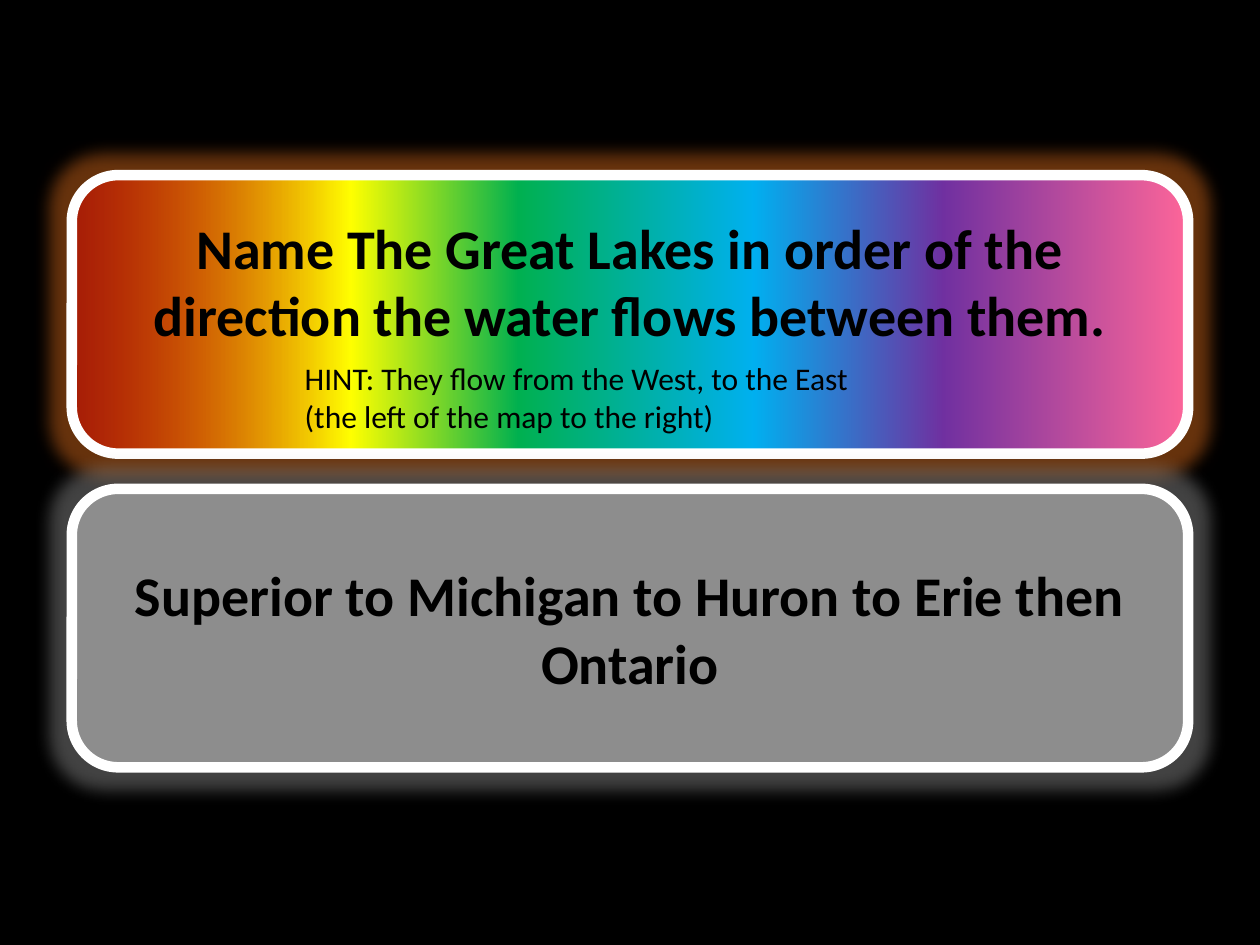
from lxml.etree import SubElement
from pptx import Presentation
from pptx.dml.color import RGBColor
from pptx.enum.shapes import MSO_SHAPE
from pptx.enum.text import MSO_ANCHOR, PP_ALIGN
from pptx.oxml.ns import qn
from pptx.util import Inches, Pt

RAINBOW = [(0, "FF0000", 41), (25, "FFFF00", 100), (40, "00B050", 100),
           (61, "00B0F0", 100), (78, "7030A0", 100), (100, "FF6699", 100)]


def rgb(code):
    return RGBColor.from_string(code)


def tint(parent, code, alpha):
    node = SubElement(parent, qn("a:srgbClr"), val=code)
    if alpha < 100:
        SubElement(node, qn("a:alpha"), val=str(alpha * 1000))


def write(frame, text, size, bold=False, align=PP_ALIGN.LEFT):
    frame.word_wrap = True
    frame.text = text
    para = frame.paragraphs[0]
    para.alignment = align
    font = para.font
    font.name, font.size, font.bold = "Calibri", Pt(size), bold
    font.color.rgb = rgb("000000")


def blend(card, stops):
    card.fill.gradient()
    card.fill.gradient_angle = 0
    group = card.element.spPr.find(".//" + qn("a:gsLst"))
    for old in list(group):
        group.remove(old)
    for place, code, alpha in stops:
        stop = SubElement(group, qn("a:gs"), pos=str(place * 1000))
        tint(stop, code, alpha)


def veil(card, code, alpha):
    card.fill.solid()
    card.fill.fore_color.rgb = rgb(code)
    color = card.element.spPr.find(qn("a:solidFill")).find(qn("a:srgbClr"))
    SubElement(color, qn("a:alpha"), val=str(alpha * 1000))


def panel(slide, box, halo):
    card = slide.shapes.add_shape(MSO_SHAPE.ROUNDED_RECTANGLE, *map(Inches, box))
    card.line.color.rgb = rgb("FFFFFF")
    card.line.width = Pt(6)
    card.shadow.inherit = False
    effects = card.element.spPr.find(qn("a:effectLst"))
    glow = SubElement(effects, qn("a:glow"), rad=str(Inches(0.25)))
    tint(glow, halo, 40)
    return card


def question(slide, box):
    left, top, width, height = box
    card = panel(slide, box, "FF7D1F")
    blend(card, RAINBOW)

    title = slide.shapes.title
    title.left, title.top = Inches(left + 0.11), Inches(top + 0.3)
    title.width, title.height = Inches(width - 0.22), Inches(1.07)
    write(title.text_frame,
          "Name The Great Lakes in order of the direction the water flows between them.",
          32, True, PP_ALIGN.CENTER)
    title.text_frame.vertical_anchor = MSO_ANCHOR.MIDDLE
    slide.shapes._spTree.append(title.element)

    hint = slide.shapes.add_textbox(Inches(left + 1.75), Inches(top + 1.41),
                                    Inches(4.88), Inches(0.71))
    write(hint.text_frame,
          "HINT: They flow from the West, to the East (the left of the map to the right)",
          18)


def answer(slide, box):
    card = panel(slide, box, "A5A5A5")
    veil(card, "FFFFFF", 40)
    write(card.text_frame, "Superior to Michigan to Huron to Erie then Ontario",
          32, True, PP_ALIGN.CENTER)
    card.text_frame.vertical_anchor = MSO_ANCHOR.MIDDLE


def main():
    deck = Presentation()
    deck.slide_width, deck.slide_height = Inches(10), Inches(7.5)
    slide = deck.slides.add_slide(deck.slide_layouts[5])
    slide.background.fill.solid()
    slide.background.fill.fore_color.rgb = rgb("000000")
    question(slide, (0.57, 1.39, 8.86, 2.21))
    answer(slide, (0.57, 3.88, 8.86, 2.21))
    deck.save("out.pptx")


if __name__ == "__main__":
    main()
